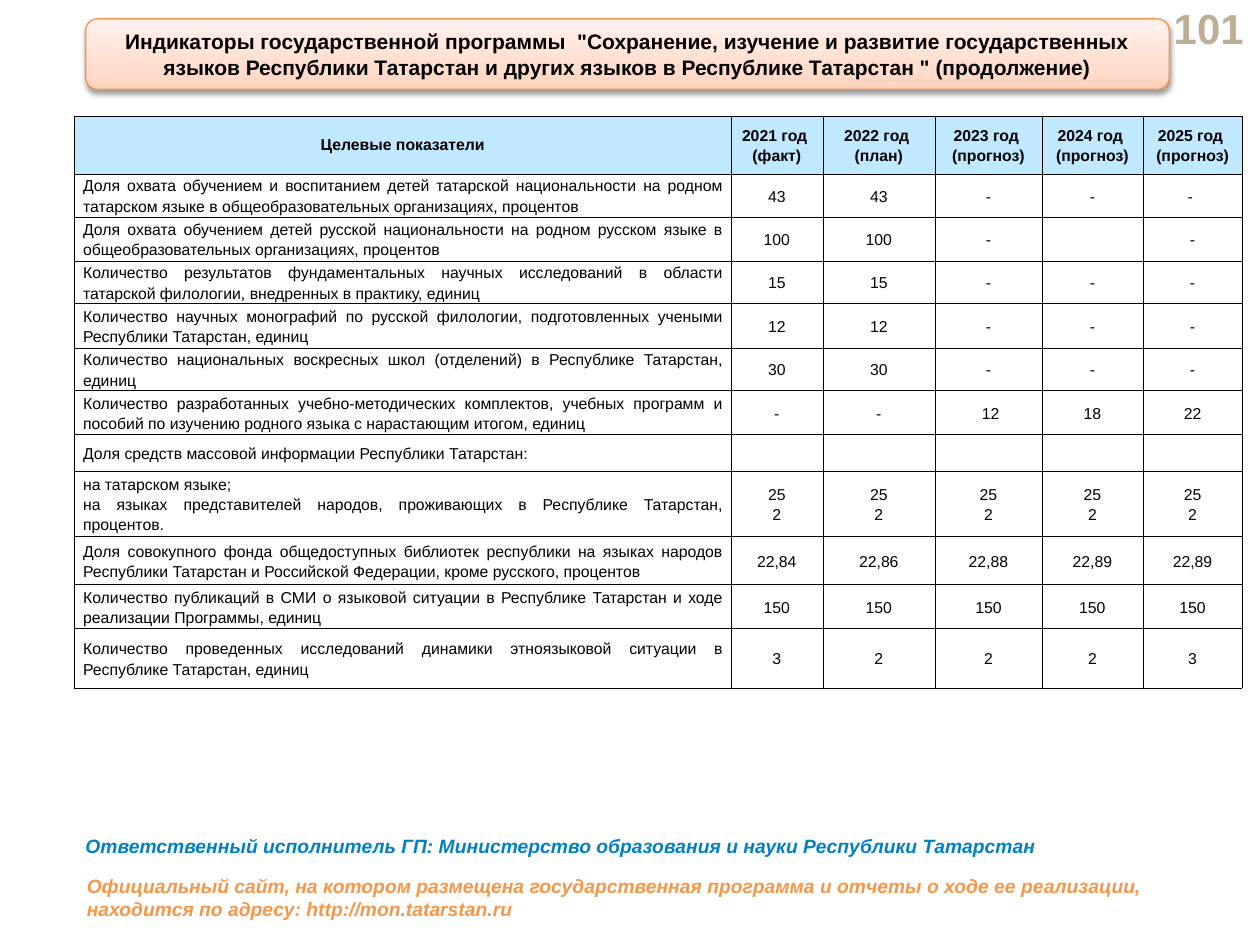
from lxml.etree import fromstring
from pptx import Presentation
from pptx.dml.color import RGBColor
from pptx.enum.shapes import MSO_SHAPE
from pptx.enum.text import MSO_ANCHOR, PP_ALIGN
from pptx.oxml.ns import nsdecls
from pptx.util import Inches, Pt

COLORS = {"black": "000000", "white": "FFFFFF", "head": "C0E9FF", "number": "BFAE96",
          "blue": "0081C5", "orange": "F79646", "edge": "F69240"}
BANNER_STOPS = [(0, "FFD2BD"), (35, "FFDED0"), (100, "FFF2ED")]

TITLE = ('Индикаторы государственной программы  "Сохранение, изучение и развитие государственных '
         'языков Республики Татарстан и других языков в Республике Татарстан " (продолжение)')
HEADER = ["Целевые показатели", "2021 год \n(факт)", "2022 год \n(план)",
          "2023 год \n(прогноз)", "2024 год \n(прогноз)", "2025 год \n(прогноз)"]
ROWS = [
    ("Доля охвата обучением и воспитанием детей татарской национальности на родном татарском языке "
     "в общеобразовательных организациях, процентов", "43", "43", "-", "-", "- "),
    ("Доля охвата обучением детей русской национальности на родном русском языке "
     "в общеобразовательных организациях, процентов", "100", "100", "-", "", "-"),
    ("Количество результатов фундаментальных научных исследований в области татарской филологии, "
     "внедренных в практику, единиц", "15", "15", "-", "-", "-"),
    ("Количество научных монографий по русской филологии, подготовленных учеными "
     "Республики Татарстан, единиц", "12", "12", "-", "-", "-"),
    ("Количество национальных воскресных школ (отделений) в Республике Татарстан, единиц",
     "30", "30", "-", "-", "-"),
    ("Количество разработанных учебно-методических комплектов, учебных программ и пособий "
     "по изучению родного языка с нарастающим итогом, единиц", "-", "-", " 12", "18", "22"),
    ("Доля средств массовой информации Республики Татарстан:", "", "", "", "", ""),
    ("на татарском языке;\nна языках представителей народов, проживающих в Республике Татарстан, "
     "процентов.", "25\n2", "25\n2", "25\n2", "25\n2", "25\n2"),
    ("Доля совокупного фонда общедоступных библиотек республики на языках народов Республики "
     "Татарстан и Российской Федерации, кроме русского, процентов",
     "22,84", "22,86", "22,88", "22,89", "22,89"),
    ("Количество публикаций в СМИ о языковой ситуации в Республике Татарстан и ходе реализации "
     "Программы, единиц", "150", "150", "150", "150", "150"),
    ("Количество проведенных исследований динамики этноязыковой ситуации в Республике Татарстан, "
     "единиц", "3", "2", "2", "2", "3"),
]
COL_WIDTHS = [5.21, 0.73, 0.89, 0.85, 0.8, 0.79]
ROW_HEIGHTS = [0.46] + [0.34, 0.35] * 3 + [0.29, 0.52, 0.38, 0.35, 0.47]
TABLE_LEFT, TABLE_TOP = 0.59, 0.92

LABELS = [
    ("101", (9.11, 0.05, 0.86, 0.34), "number", PP_ALIGN.RIGHT, MSO_ANCHOR.MIDDLE,
     {"size": Pt(24), "bold": True}),
    ("Ответственный исполнитель ГП: Министерство образования и науки Республики Татарстан",
     (0.58, 6.57, 9.55, 0.29), "blue", PP_ALIGN.LEFT, MSO_ANCHOR.TOP,
     {"size": Pt(11), "bold": True, "italic": True}),
    ("Официальный сайт, на котором размещена государственная программа и отчеты о ходе "
     "ее реализации, находится по адресу: http://mon.tatarstan.ru",
     (0.59, 6.89, 8.59, 0.43), "orange", PP_ALIGN.LEFT, MSO_ANCHOR.TOP,
     {"size": Pt(11), "bold": True, "italic": True}),
]


def rgb(name):
    return RGBColor.from_string(COLORS[name])


def xml(tag, body, attrs=""):
    return fromstring(f'<a:{tag} {nsdecls("a")} {attrs}>{body}</a:{tag}>')


def write(tf, text, color, align, font, spacing=None):
    for i, line in enumerate(text.split("\n")):
        p = tf.add_paragraph() if i else tf.paragraphs[0]
        p.alignment = align
        if spacing:
            p.line_spacing = spacing
        if not line:
            p._p.get_or_add_endParaRPr().set("sz", str(int(font["size"].pt * 100)))
            continue
        r = p.add_run()
        r.text = line
        for key, value in font.items():
            setattr(r.font, key, value)
        r.font.name = "Arial"
        r.font.color.rgb = rgb(color)


def add_banner(s):
    sp = s.shapes.add_shape(MSO_SHAPE.ROUNDED_RECTANGLE,
                            *map(Inches, (0.68, 0.15, 8.6, 0.56)))
    sp.line.color.rgb = rgb("edge")
    sp.line.width = Pt(0.75)
    sp.fill.background()
    stops = "".join(f'<a:gs pos="{pos * 1000}"><a:srgbClr val="{c}"/></a:gs>'
                    for pos, c in BANNER_STOPS)
    props = sp._element.spPr
    old = props.find("{*}noFill")
    props.replace(old, xml("gradFill", f'<a:gsLst>{stops}</a:gsLst><a:lin ang="16200000"/>'))
    props.append(xml("effectLst", f'<a:outerShdw blurRad="{Pt(3.1)}" dist="{Pt(1.6)}" '
                     'dir="5400000" rotWithShape="0"><a:srgbClr val="000000">'
                     '<a:alpha val="38000"/></a:srgbClr></a:outerShdw>'))
    sp.text_frame.word_wrap = True
    sp.text_frame.vertical_anchor = MSO_ANCHOR.MIDDLE
    write(sp.text_frame, TITLE, "black", PP_ALIGN.CENTER, {"size": Pt(12), "bold": True})


def add_indicators(s):
    rows = [HEADER] + ROWS
    box = TABLE_LEFT, TABLE_TOP, sum(COL_WIDTHS), sum(ROW_HEIGHTS)
    table = s.shapes.add_table(len(rows), len(HEADER), *map(Inches, box)).table
    for col, width in zip(table.columns, COL_WIDTHS):
        col.width = Inches(width)
    for i, (row, height) in enumerate(zip(rows, ROW_HEIGHTS)):
        table.rows[i].height = Inches(height)
        for j, text in enumerate(row):
            cell = table.cell(i, j)
            fmt = {"margin_left": Inches(0.07), "margin_right": Inches(0.07),
                   "margin_top": 0, "margin_bottom": 0,
                   "vertical_anchor": MSO_ANCHOR.MIDDLE}
            for key, value in fmt.items():
                setattr(cell, key, value)
            cell.fill.solid()
            cell.fill.fore_color.rgb = rgb("white" if i else "head")
            for k, side in enumerate(("lnL", "lnR", "lnT", "lnB")):
                line = '<a:solidFill><a:srgbClr val="000000"/></a:solidFill>'
                cell._tc.tcPr.insert(k, xml(side, line, f'w="{Pt(0.25)}"'))
            align = PP_ALIGN.JUSTIFY if i and not j else PP_ALIGN.CENTER
            write(cell.text_frame, text, "black", align,
                  {"size": Pt(9), "bold": not i}, 1.15 if i or j else None)


def main():
    prs = Presentation()
    prs.slide_width, prs.slide_height = Inches(10), Inches(7.5)
    s = prs.slides.add_slide(prs.slide_layouts[6])
    add_banner(s)
    add_indicators(s)
    for text, box, color, align, anchor, font in LABELS:
        tf = s.shapes.add_textbox(*map(Inches, box)).text_frame
        tf.word_wrap = True
        tf.vertical_anchor = anchor
        write(tf, text, color, align, font)
    prs.save("out.pptx")


if __name__ == "__main__":
    main()
